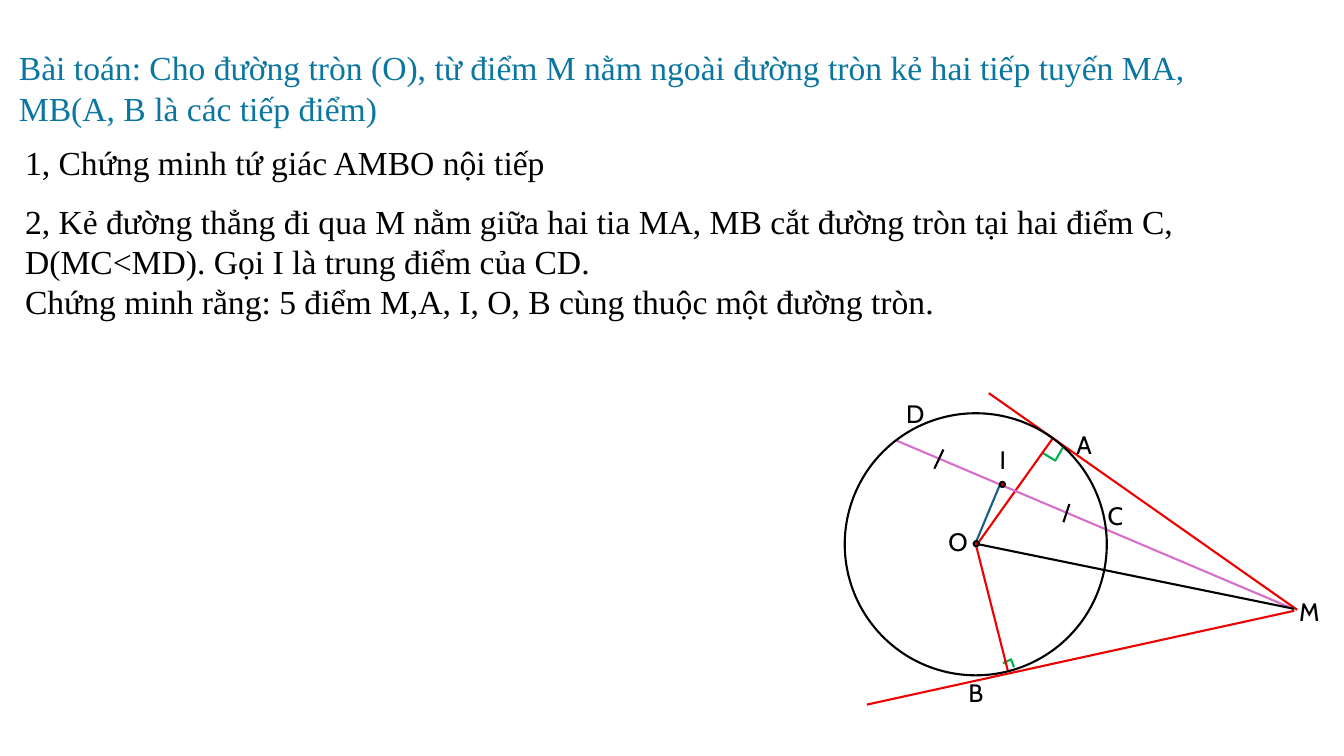
from lxml.etree import SubElement
from pptx import Presentation
from pptx.dml.color import RGBColor
from pptx.enum.shapes import MSO_CONNECTOR, MSO_SHAPE
from pptx.oxml.ns import qn
from pptx.util import Pt

BLACK = RGBColor(0x00, 0x00, 0x00)
RED = RGBColor(0xEE, 0x00, 0x00)
GREEN = RGBColor(0x00, 0xB0, 0x50)
PINK = RGBColor(0xD8, 0x6E, 0xCC)
BLUE = RGBColor(0x15, 0x60, 0x82)
TEAL = RGBColor(0x0B, 0x76, 0xA0)

LINE_WIDTH = 1.5
RADIUS = 93.6
DOT_RADIUS = 1.8
CENTER = (97, 108.8)

SEGMENTS = [
    ((97.5, 109.5), (152.4, 32.5), RED),
    ((19.2, 223.3), (324.5, 156.3), RED),
    (CENTER, (120, 199.5), RED),
    ((106.3, 0.8), (326.6, 155.6), RED),
    ((40.1, 34.6), (323.8, 154.9), PINK),
    ((73.9, 41.1), (67.4, 54.8), BLACK),
    ((163.9, 80), (159.6, 93), BLACK),
    ((99.1, 108.8), (324.5, 154.9), BLACK),
    ((114.2, 66.3), (96.2, 109.5), BLUE),
]
RIGHT_ANGLES = [
    [(144.5, 43.3), (153.8, 49), (159.6, 39)],
    [(124.3, 196.6), (122.2, 191), (116.4, 193.8)],
]
DOTS = [(97.3, 108.4), (116, 66)]
LABELS = {
    "O": (70.3, 92.2),
    "A": (161.8, 23.1),
    "B": (84.7, 200.2),
    "M": (320.9, 142.6),
    "C": (184.1, 74.2),
    "D": (40.1, 0.8),
    "I": (107, 33.9),
}

TASK_1 = ["1, Chứng minh tứ giác AMBO nội tiếp"]
TASK_2 = [
    "2, Kẻ đường thẳng đi qua M nằm giữa hai tia MA, MB cắt đường tròn tại hai "
    "điểm C, D(MC<MD). Gọi I là trung điểm của CD.",
    "Chứng minh rằng: 5 điểm M,A, I, O, B cùng thuộc một đường tròn.",
]
PROBLEM = [
    "Bài toán: Cho đường tròn (O), từ điểm M nằm ngoài đường tròn kẻ hai tiếp "
    "tuyến MA, MB(A, B là các tiếp điểm)"
]


def add_text(slide, lines, box, *, size=24, font="Times New Roman", color=BLACK):
    tf = slide.shapes.add_textbox(*map(Pt, box)).text_frame
    tf.word_wrap = True
    for i, line in enumerate(lines):
        p = tf.add_paragraph() if i else tf.paragraphs[0]
        r = p.add_run()
        r.text = line
        r.font.size = Pt(size)
        r.font.name = font
        r.font.color.rgb = color


def set_line(sp, color):
    sp.line.color.rgb = color
    sp.line.width = Pt(LINE_WIDTH)


def add_segment(slide, start, end, color):
    sp = slide.shapes.add_connector(MSO_CONNECTOR.STRAIGHT, *map(Pt, start + end))
    set_line(sp, color)
    SubElement(sp._element.spPr, qn("a:effectLst"))


def add_circle(slide, center, radius, fill=None):
    x, y = center
    box = (x - radius, y - radius, 2 * radius, 2 * radius)
    sp = slide.shapes.add_shape(MSO_SHAPE.OVAL, *map(Pt, box))
    sp.shadow.inherit = False
    set_line(sp, BLACK)
    if fill is None:
        sp.fill.background()
    else:
        sp.fill.solid()
        sp.fill.fore_color.rgb = fill


def add_right_angle(slide, points):
    start, *rest = [(Pt(x), Pt(y)) for x, y in points]
    builder = slide.shapes.build_freeform(*start)
    builder.add_line_segments(rest, close=False)
    sp = builder.convert_to_shape()
    sp.shadow.inherit = False
    sp.fill.background()
    set_line(sp, GREEN)


def add_statement(slide, left, top):
    add_text(slide, PROBLEM, (left, top, 872, 65.5), color=TEAL)
    add_text(slide, TASK_1, (left + 4.3, top + 67.7, 388, 36))
    add_text(slide, TASK_2, (left + 4.3, top + 109.4, 938, 94.3))


def add_figure(slide, left, top):
    def place(point):
        return left + point[0], top + point[1]

    for corner in RIGHT_ANGLES:
        add_right_angle(slide, [place(point) for point in corner])
    for start, end, color in SEGMENTS:
        add_segment(slide, place(start), place(end), color)
    add_circle(slide, place(CENTER), RADIUS)
    for dot in DOTS:
        add_circle(slide, place(dot), DOT_RADIUS, fill=RED)
    for name, point in LABELS.items():
        add_text(slide, [name], place(point) + (26.6, 28.8), size=18, font="Cabin")


def main():
    prs = Presentation()
    prs.slide_width, prs.slide_height = Pt(960), Pt(540)
    slide = prs.slides.add_slide(prs.slide_layouts[6])
    add_statement(slide, 6.5, 30.3)
    add_figure(slide, 600, 280)
    prs.save("out.pptx")


if __name__ == "__main__":
    main()
